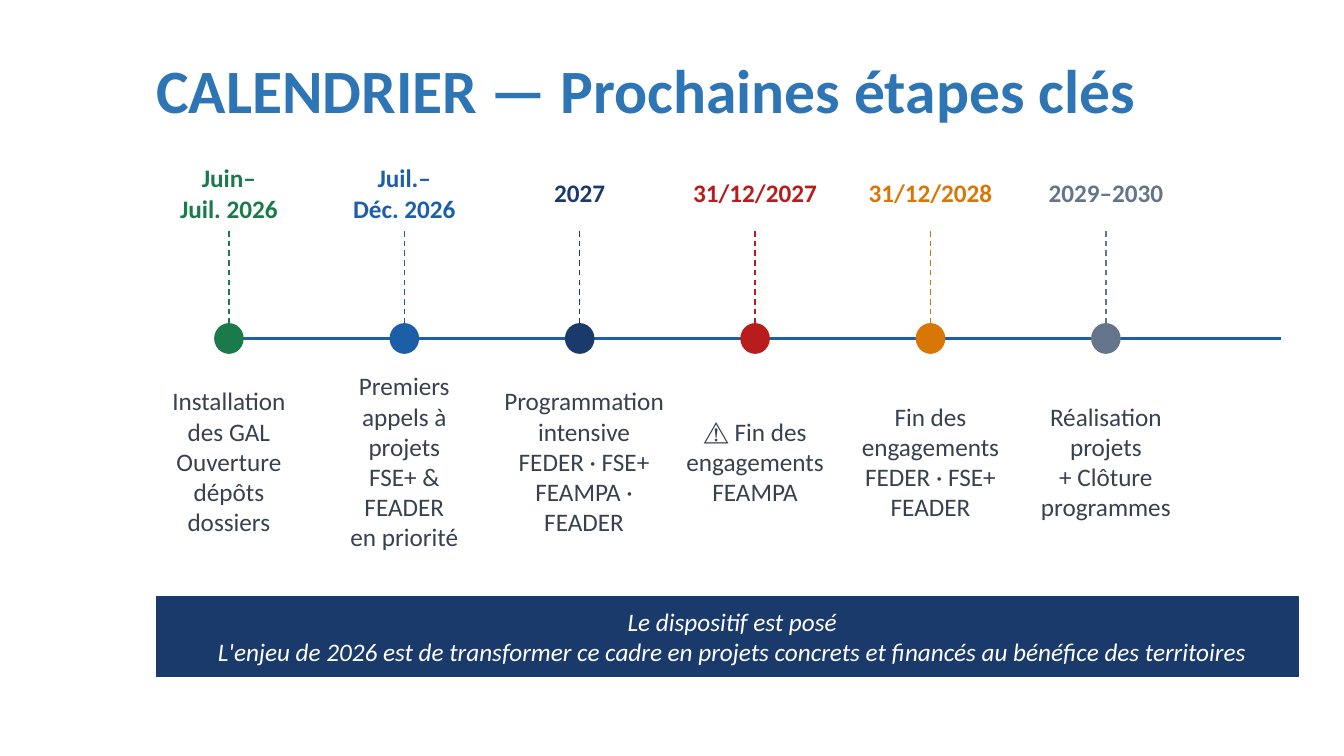
from dataclasses import dataclass

from lxml.etree import SubElement
from pptx import Presentation
from pptx.dml.color import RGBColor
from pptx.enum.dml import MSO_LINE
from pptx.enum.shapes import MSO_CONNECTOR, MSO_SHAPE
from pptx.enum.text import MSO_ANCHOR, MSO_AUTO_SIZE, PP_ALIGN
from pptx.oxml.ns import qn
from pptx.util import Cm, Pt

# Content
HEADING = "CALENDRIER — Prochaines étapes clés"
MILESTONES = [
    # colour name, date lines, step lines
    ("green", ["Juin–", "Juil. 2026"],
     ["Installation", "des GAL", "Ouverture", "dépôts dossiers"]),
    ("blue", ["Juil.–", "Déc. 2026"],
     ["Premiers", "appels à projets", "FSE+ & FEADER", "en priorité"]),
    ("navy", ["2027"],
     ["Programmation", "intensive", "FEDER · FSE+", "FEAMPA · FEADER"]),
    ("red", ["31/12/2027"], ["⚠ Fin des", "engagements", "FEAMPA"]),
    ("orange", ["31/12/2028"],
     ["Fin des", "engagements", "FEDER · FSE+", "FEADER"]),
    ("slate", ["2029–2030"],
     ["Réalisation", "projets", "+ Clôture", "programmes"]),
]
CONCLUSION = [
    "Le dispositif est posé",
    "L'enjeu de 2026 est de transformer ce cadre en projets concrets "
    "et financés au bénéfice des territoires",
]


@dataclass(frozen=True)
class Theme:
    font: str = "Calibri"
    heading_size: int = 44
    text_size: int = 18
    heading: str = "2E75B6"
    text: str = "374151"
    white: str = "FFFFFF"
    green: str = "1A7A4A"
    blue: str = "1C5EA8"
    navy: str = "1A3A6B"
    red: str = "B91C1C"
    orange: str = "D97706"
    slate: str = "64748B"


THEME = Theme()

# Layout, in centimetres
MARGIN = 3.94
FIRST_CENTRE, PITCH = 5.77, 4.42
AXIS_Y, AXIS_END = 8.53, 32.28
DOT_W, DOT_H = 0.71, 0.74
DATE_TOP, DATE_W, DATE_H = 4.01, 3.66, 1.7
STEM_TOP = 5.82
STEP_TOP, STEP_W, STEP_H = 9.3, 3.84, 4.65
WIDE_STEP_W = 4.06  # room for the longest word
BANNER_TOP, BANNER_W, BANNER_H = 15.04, 28.78, 2.01


def rgb(colour):
    return RGBColor.from_string(colour)


def write(shape, lines, colour, size=THEME.text_size, align=PP_ALIGN.CENTER,
          bold=False, italic=False, left_inset=0):
    frame = shape.text_frame
    frame.word_wrap = True
    frame.auto_size = MSO_AUTO_SIZE.NONE
    frame.vertical_anchor = MSO_ANCHOR.MIDDLE
    frame.margin_left = Cm(left_inset)
    frame.margin_right = frame.margin_top = frame.margin_bottom = 0
    for index, line in enumerate(lines):
        paragraph = frame.add_paragraph() if index else frame.paragraphs[0]
        paragraph.alignment = align
        run = paragraph.add_run()
        run.text = line
        run.font.name = THEME.font
        run.font.size = Pt(size)
        run.font.bold = bold
        run.font.italic = italic
        run.font.color.rgb = rgb(colour)


def add_label(slide, left, top, width, height, lines, colour, bold=False):
    label = slide.shapes.add_textbox(Cm(left), Cm(top), Cm(width), Cm(height))
    write(label, lines, colour, bold=bold)


def add_block(slide, kind, left, top, width, height, colour):
    block = slide.shapes.add_shape(kind, Cm(left), Cm(top), Cm(width), Cm(height))
    block.shadow.inherit = False
    block.fill.solid()
    block.fill.fore_color.rgb = rgb(colour)
    block.line.color.rgb = rgb(colour)
    block.line.width = Pt(1)
    return block


def add_line(slide, x1, y1, x2, y2, colour, width, dash=None):
    line = slide.shapes.add_connector(
        MSO_CONNECTOR.STRAIGHT, Cm(x1), Cm(y1), Cm(x2), Cm(y2))
    line.line.color.rgb = rgb(colour)
    line.line.width = Pt(width)
    if dash:
        line.line.dash_style = dash
    SubElement(line._element.spPr, qn("a:effectLst"))


def add_milestone(slide, centre, colour, date, step):
    dot_top = AXIS_Y - DOT_H / 2
    add_block(slide, MSO_SHAPE.OVAL, centre - DOT_W / 2, dot_top,
              DOT_W, DOT_H, colour)
    add_label(slide, centre - DATE_W / 2, DATE_TOP, DATE_W, DATE_H,
              date, colour, bold=True)
    add_line(slide, centre, STEM_TOP, centre, dot_top, colour, 1, MSO_LINE.DASH)
    step_width = WIDE_STEP_W if "Programmation" in step else STEP_W
    add_label(slide, centre - STEP_W / 2, STEP_TOP, step_width, STEP_H,
              step, THEME.text)


def main():
    deck = Presentation()
    deck.slide_width, deck.slide_height = Cm(33.87), Cm(19.05)
    slide = deck.slides.add_slide(deck.slide_layouts[5])

    # Title
    title = slide.shapes.title
    title.left, title.top = Cm(MARGIN), Cm(1.32)
    title.width, title.height = Cm(25.32), Cm(1.85)
    write(title, [HEADING], THEME.heading, THEME.heading_size,
          PP_ALIGN.LEFT, bold=True)

    # Timeline
    add_line(slide, FIRST_CENTRE, AXIS_Y, AXIS_END, AXIS_Y, THEME.blue, 2.5)
    for index, (colour_name, date, step) in enumerate(MILESTONES):
        add_milestone(slide, FIRST_CENTRE + index * PITCH,
                      getattr(THEME, colour_name), date, step)

    # Conclusion banner
    banner = add_block(slide, MSO_SHAPE.RECTANGLE, MARGIN, BANNER_TOP,
                       BANNER_W, BANNER_H, THEME.navy)
    write(banner, CONCLUSION, THEME.white, italic=True, left_inset=0.25)

    deck.save("out.pptx")


if __name__ == "__main__":
    main()
